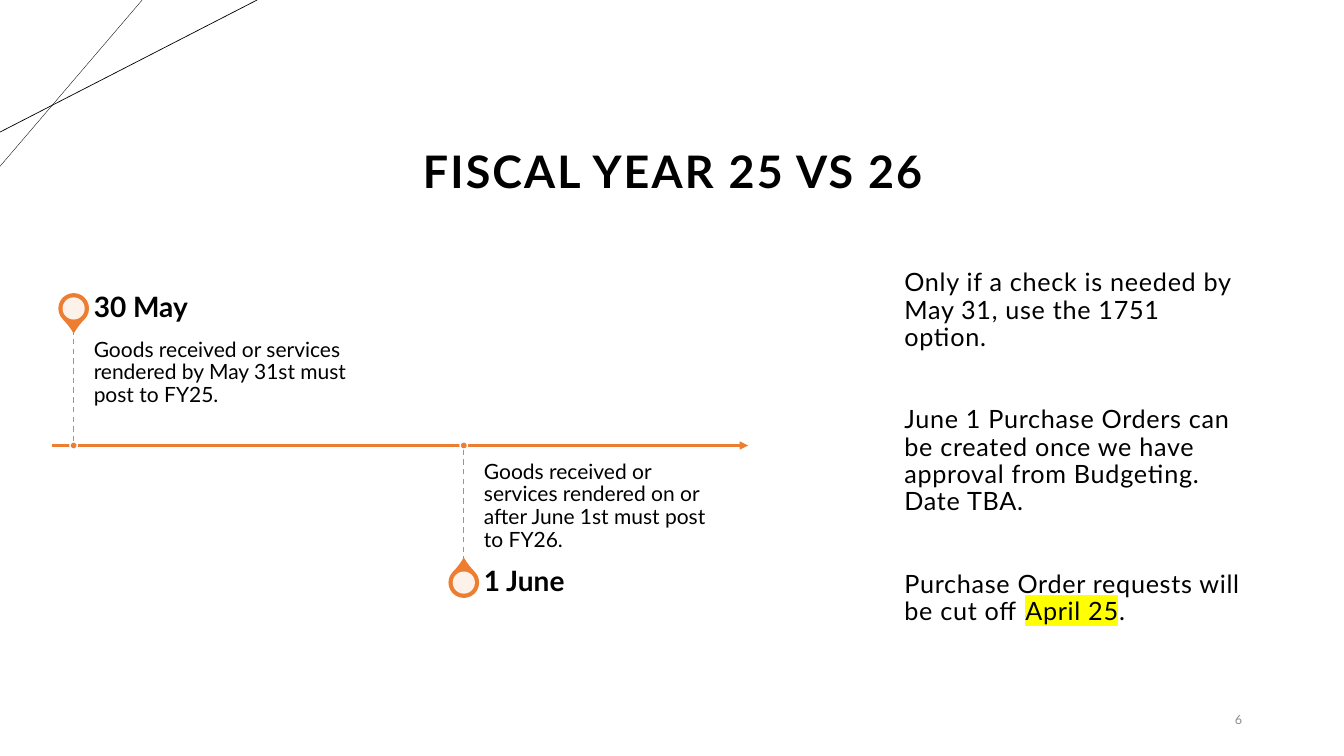
import lxml.etree
import pptx
import pptx.dml.color
import pptx.enum.dml
import pptx.enum.shapes
import pptx.enum.text
import pptx.oxml.ns
import pptx.util

WIDTH, HEIGHT = pptx.util.Inches(13.33), pptx.util.Inches(7.5)
COLORS = {"ink": "000000", "accent": "ED7D31", "paper": "FFFFFF",
          "muted": "8C8C8C", "marker": "FFFF00"}
FONT = "Lato"
AXIS_ROW = 58.93
PIN_REACH, STEM_REACH = 18.13, 15.4
ANCHOR = pptx.enum.text.MSO_ANCHOR
ALIGN = pptx.enum.text.PP_ALIGN
SHAPE = pptx.enum.shapes.MSO_SHAPE
MILESTONES = [
    (5.48, -1, "30 May",
     "Goods received or services rendered by May 31st must post to FY25."),
    (34.51, 1, "1 June",
     "Goods received or services rendered on or after June 1st must post to FY26."),
]
NOTES = [
    [("Only if a check is needed by May 31, use the 1751 option.", False)],
    [("June 1 Purchase Orders can be created once we have approval from "
      "Budgeting. Date TBA.", False)],
    [("Purchase Order requests will be cut off ", False), ("April 25", True), (".", False)],
]


def across(columns):
    """Turn hundredths of the slide width into a length."""
    return round(WIDTH * columns / 100)


def down(rows):
    """Turn hundredths of the slide height into a length."""
    return round(HEIGHT * rows / 100)


def color(name):
    """Look up a named colour."""
    return pptx.dml.color.RGBColor.from_string(COLORS[name])


def set_values(target, values):
    """Set every attribute in a dict of format values."""
    for name, value in values.items():
        setattr(target, name, value)


def add_xml(parent, tag, **attributes):
    """Append a DrawingML element."""
    return lxml.etree.SubElement(parent, pptx.oxml.ns.qn(tag), attributes)


def place(box, left, top, width, height):
    """Put a box on the grid."""
    set_values(box, {"left": across(left), "top": down(top),
                     "width": across(width), "height": down(height)})


def format_frame(frame, anchor=ANCHOR.MIDDLE, insets=(0, 0, 0, 0)):
    """Set wrapping, anchor and insets given as left, top, right, bottom."""
    left, top, right, bottom = insets
    set_values(frame, {
        "word_wrap": True, "auto_size": pptx.enum.text.MSO_AUTO_SIZE.NONE,
        "vertical_anchor": anchor,
        "margin_left": across(left), "margin_top": down(top),
        "margin_right": across(right), "margin_bottom": down(bottom)})


def add_span(para, text, size, bold=False, spacing=0, ink="ink", marked=False):
    """Add a formatted run to a paragraph."""
    span = para.add_run()
    span.text = text
    span.font.color.rgb = color(ink)
    properties = span.font.fill._xPr
    if marked:
        add_xml(add_xml(properties, "a:highlight"), "a:srgbClr", val=COLORS["marker"])
    if spacing:
        properties.set("spc", str(round(spacing * 100)))
    set_values(span.font, {"name": FONT, "size": pptx.util.Pt(size), "bold": bold})


def add_text(page, area, text, size, anchor=ANCHOR.MIDDLE, insets=(0, 0, 0, 0),
             align=ALIGN.LEFT, **style):
    """Add a text box with one paragraph."""
    box = page.shapes.add_textbox(0, 0, 0, 0)
    place(box, *area)
    format_frame(box.text_frame, anchor, insets)
    para = box.text_frame.paragraphs[0]
    set_values(para, {"alignment": align, "line_spacing": 0.9})
    add_span(para, text, size, **style)


def add_line(page, start, end, ink, weight, dashed=False, arrow=False):
    """Draw a straight line between two grid points."""
    line = page.shapes.add_connector(
        pptx.enum.shapes.MSO_CONNECTOR.STRAIGHT,
        across(start[0]), down(start[1]), across(end[0]), down(end[1]))
    line.line.color.rgb = color(ink)
    line.line.width = pptx.util.Pt(weight)
    if dashed:
        line.line.dash_style = pptx.enum.dml.MSO_LINE.DASH
    if arrow:
        add_xml(line.line._get_or_add_ln(), "a:tailEnd", type="triangle")
    add_xml(line._element.spPr, "a:effectLst")


def add_marker(page, kind, center, size, ink, outline=None):
    """Draw a shape of equal sides, size in columns, around a grid point."""
    side = across(size)
    marker = page.shapes.add_shape(
        kind, across(center[0]) - side // 2, down(center[1]) - side // 2, side, side)
    marker.shadow.inherit = False
    marker.fill.solid()
    marker.fill.fore_color.rgb = color(ink)
    if outline:
        marker.line.color.rgb = color(outline)
        marker.line.width = pptx.util.Pt(1)
    else:
        marker.line.fill.background()
    return marker


def add_milestone(page, column, side, date, detail):
    """Draw a pin, its stem and its texts above (-1) or below (1) the axis."""
    pin = (column, AXIS_ROW + side * PIN_REACH)
    stem_end = AXIS_ROW + side * STEM_REACH
    drop = add_marker(page, SHAPE.TEAR, pin, 2.18, "accent", "accent")
    drop.adjustments[0] = 1.15
    drop.rotation = 225 + 90 * side
    hole = add_marker(page, SHAPE.OVAL, pin, 1.65, "paper")
    shade = hole._element.spPr.find(".//" + pptx.oxml.ns.qn("a:srgbClr"))
    add_xml(shade, "a:alpha", val="90000")
    left = column + 1.5
    above = side < 0
    add_text(page, (left, min(AXIS_ROW, stem_end), 18.83, STEM_REACH), detail, 15,
             anchor=ANCHOR.TOP if above else ANCHOR.BOTTOM,
             insets=(0, 1.33, 0, 2.13) if above else (0, 2.13, 0.75, 1.33))
    add_text(page, (left, pin[1] - 2.73, 18.83, 5.47), date, 20,
             insets=(0, 0, 1.05, 0), bold=True)
    add_line(page, (column, stem_end), (column, AXIS_ROW), "accent", 1, dashed=True)
    add_marker(page, SHAPE.OVAL, (column, AXIS_ROW), 0.55, "accent", "paper")


def fill_title(title):
    """Place and write the title."""
    place(title, 6.9, 13.07, 86.35, 19.87)
    format_frame(title.text_frame, insets=(0.75, 0.67, 0.75, 0.67))
    para = title.text_frame.paragraphs[0]
    set_values(para, {"alignment": ALIGN.CENTER, "line_spacing": 0.9})
    add_span(para, "FISCAL YEAR 25 VS 26", 32, bold=True, spacing=1.5)


def fill_notes(body):
    """Place and write the notes beside the timeline."""
    place(body, 66.54, 35.73, 26.63, 47.2)
    frame = body.text_frame
    format_frame(frame, ANCHOR.TOP, (0.75, 0, 0.75, 0.67))
    for index, spans in enumerate(NOTES):
        para = frame.add_paragraph() if index else frame.paragraphs[0]
        properties = para._p.get_or_add_pPr()
        properties.set("marL", "0")
        properties.set("indent", "0")
        add_xml(properties, "a:buNone")
        set_values(para, {"alignment": ALIGN.LEFT, "line_spacing": 0.9,
                          "space_before": pptx.util.Pt(39.5 if index else 0)})
        for text, marked in spans:
            add_span(para, text, 18, spacing=0.5, marked=marked)


def main():
    """Build the fiscal year slide."""
    deck = pptx.Presentation()
    set_values(deck, {"slide_width": WIDTH, "slide_height": HEIGHT})
    page = deck.slides.add_slide(deck.slide_layouts[1])
    add_line(page, (10.58, 0), (0, 22), "ink", 0.25)
    add_line(page, (19.13, 0), (0, 17.47), "ink", 0.5)
    fill_title(page.shapes.title)
    fill_notes(page.placeholders[1])
    add_text(page, (85.07, 92.67, 8.1, 5.33), "6", 9, insets=(0.75, 0.67, 0.75, 0.67),
             align=ALIGN.RIGHT, ink="muted")
    add_line(page, (3.9, AXIS_ROW), (55.66, AXIS_ROW), "accent", 1.5, arrow=True)
    for milestone in MILESTONES:
        add_milestone(page, *milestone)
    deck.save("out.pptx")


if __name__ == "__main__":
    main()
